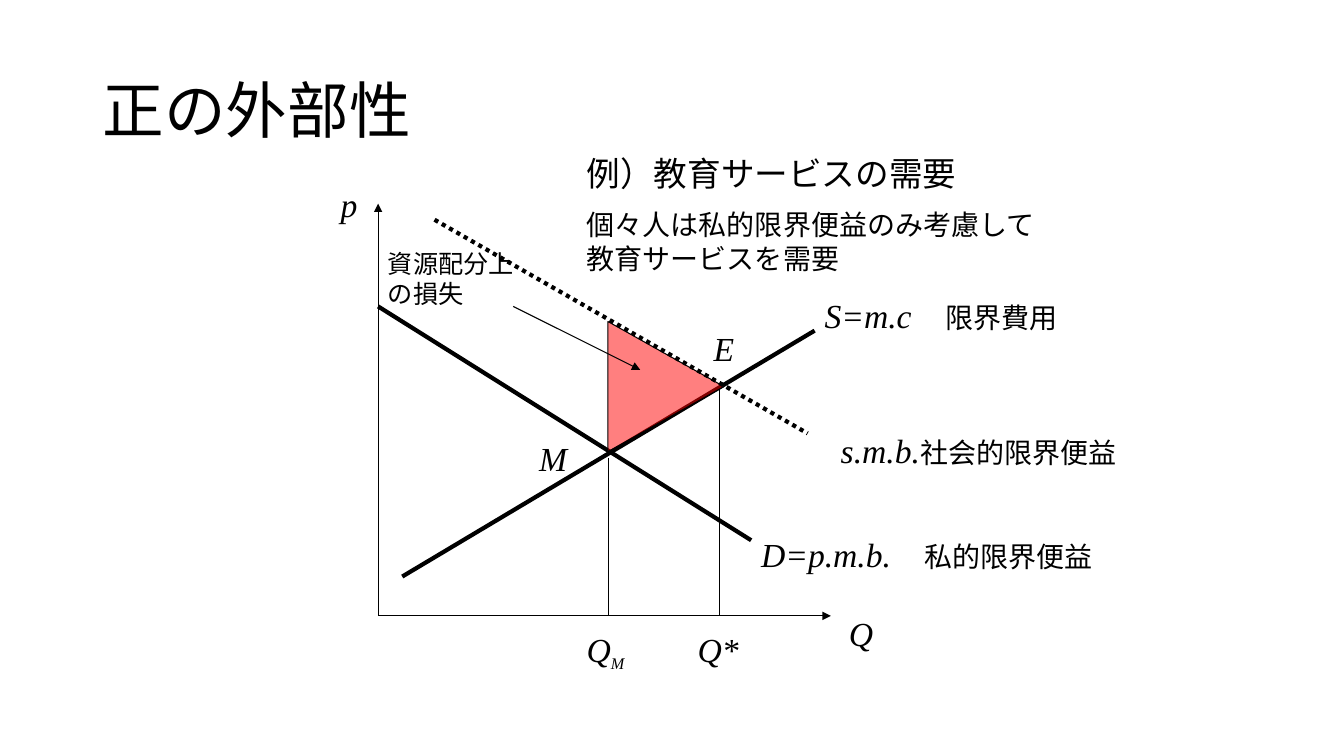
import pptx
import pptx.util
import pptx.dml.color
import pptx.enum.dml
import pptx.enum.shapes
import pptx.enum.text
import pptx.oxml
import pptx.oxml.ns

Inches, Pt = pptx.util.Inches, pptx.util.Pt
SERIF, SANS = "Times New Roman", "Noto Sans CJK JP"
INK, LOSS = "000000", "FF0000"


def color(code):
    return pptx.dml.color.RGBColor.from_string(code)


def add_xml(parent, tag, **attrs):
    node = pptx.oxml.ns.qn(tag)
    child = parent.makeelement(node, attrs)
    parent.append(child)
    return child


def add_run(para, text, size=24, font=SERIF, italic=False, base=None):
    run = para.add_run()
    run.text = text
    run.font.size, run.font.name = Pt(size), font
    run.font.italic = italic
    run.font.color.rgb = color(INK)
    props = run.font._element
    add_xml(props, "a:ea", typeface=SANS)
    if base:
        props.set("baseline", str(base * 1000))


def add_text(slide, box, *paras, gap=0, ratio=None, anchor="TOP"):
    """Each paragraph is a list of (text, format) pairs."""
    frame = slide.shapes.add_textbox(*map(Inches, box)).text_frame
    frame.word_wrap = True
    frame.vertical_anchor = getattr(pptx.enum.text.MSO_ANCHOR, anchor)
    for i, runs in enumerate(paras):
        para = frame.add_paragraph() if i else frame.paragraphs[0]
        para.line_spacing = ratio
        if i:
            para.space_before = Pt(gap)
        for text, style in runs:
            add_run(para, text, **style)


def add_line(slide, start, end, width=0.75, arrow=False, dots=False):
    kind = pptx.enum.shapes.MSO_CONNECTOR.STRAIGHT
    line = slide.shapes.add_connector(kind, *map(Inches, (*start, *end)))
    line.line.color.rgb = color(INK)
    line.line.width = Pt(width)
    if dots:
        line.line.dash_style = pptx.enum.dml.MSO_LINE.ROUND_DOT
    if arrow:
        add_xml(line.line._get_or_add_ln(), "a:tailEnd", type="triangle")
    add_xml(line._element.spPr, "a:effectLst")


def add_loss(slide, left, top, width, height):
    # The triangle is turned to point right, so its sides swap
    x = left + (width - height) / 2
    y = top + (height - width) / 2
    kind = pptx.enum.shapes.MSO_SHAPE.ISOSCELES_TRIANGLE
    area = slide.shapes.add_shape(kind, *map(Inches, (x, y, height, width)))
    area.rotation = 90
    area.shadow.inherit = False
    area.fill.solid()
    area.fill.fore_color.rgb = color(LOSS)
    tint = area._element.spPr.find(".//" + pptx.oxml.ns.qn("a:srgbClr"))
    add_xml(tint, "a:alpha", val="50000")
    area.line.color.rgb = color(INK)
    area.line.width = Pt(0.75)


def draw_graph(slide, box):
    left, top, width, height = box
    base = top + height
    q_m, q_e = 2.29, 3.39

    def at(q, p):
        return left + q, base - p

    # Axes
    add_line(slide, at(0, 0), at(width, 0), arrow=True)
    add_line(slide, at(0, 0), at(0, height), arrow=True)

    # Demand and supply
    add_line(slide, at(0, 3.07), at(3.7, 0.75), width=3)
    add_line(slide, at(0.24, 0.39), at(4.33, 2.83), width=3)

    # Quantities and welfare loss
    for q, p in ((q_e, 2.28), (q_m, 1.57)):
        add_line(slide, at(q, p), at(q, 0))
    add_loss(slide, *at(q_m - 0.01, 2.92), 1.15, 1.29)
    add_line(slide, at(1.34, 3.07), at(2.6, 2.44), arrow=True)

    # Social marginal benefit
    add_line(slide, at(0.56, 3.93), at(4.26, 1.81), width=3, dots=True)

    # Labels: corner, width, symbol, further run
    math, word = dict(italic=True), dict(size=20)
    labels = [
        (4.57, 0.08, 0.63, "Q", None),
        (-0.47, 4.33, 0.47, "p", None),
        (4.33, 3.23, 2.76, "S=m.c\u3000".replace("\u3000", "　"), ("限界費用", word)),
        (3.07, -0.08, 0.79, "Q*", None),
        (3.7, 0.86, 3.78, "D=p.m.b.　", ("私的限界便益", word)),
        (3.23, 2.91, 0.44, "E", None),
        (1.97, -0.08, 0.63, "Q", ("M", dict(size=20, italic=True, base=-25))),
        (4.49, 1.89, 3.07, "s.m.b.", ("社会的限界便益", dict(size=20, font=SANS))),
        (1.5, 1.81, 0.47, "M", None),
    ]
    for q, p, wide, sign, more in labels:
        runs = [(sign, math)] + ([more] if more else [])
        add_text(slide, (*at(q, p), wide, 0.5), runs)
    add_text(slide, (*at(0, 3.7), 1.5, 0.7),
             [("資源配分上の損失", dict(size=18, font=SANS))])


def draw_title(slide, box):
    add_text(slide, box, [("正の外部性", dict(size=44, font=SANS))],
             ratio=0.9, anchor="MIDDLE")


def draw_case(slide, box):
    add_text(slide, box,
             [("例）教育サービスの需要", dict(font=SANS))],
             [("個々人は私的限界便益のみ考慮して教育サービスを需要",
               dict(size=20, font=SANS))], gap=10)


def main():
    deck = pptx.Presentation()
    deck.slide_width, deck.slide_height = Inches(13.33), Inches(7.5)
    slide = deck.slides.add_slide(deck.slide_layouts[6])
    draw_title(slide, (0.92, 0.4, 11.5, 1.45))
    draw_graph(slide, (3.75, 2.02, 4.49, 4.09))
    draw_case(slide, (5.72, 1.47, 4.88, 1.35))
    deck.save("out.pptx")


if __name__ == "__main__":
    main()
